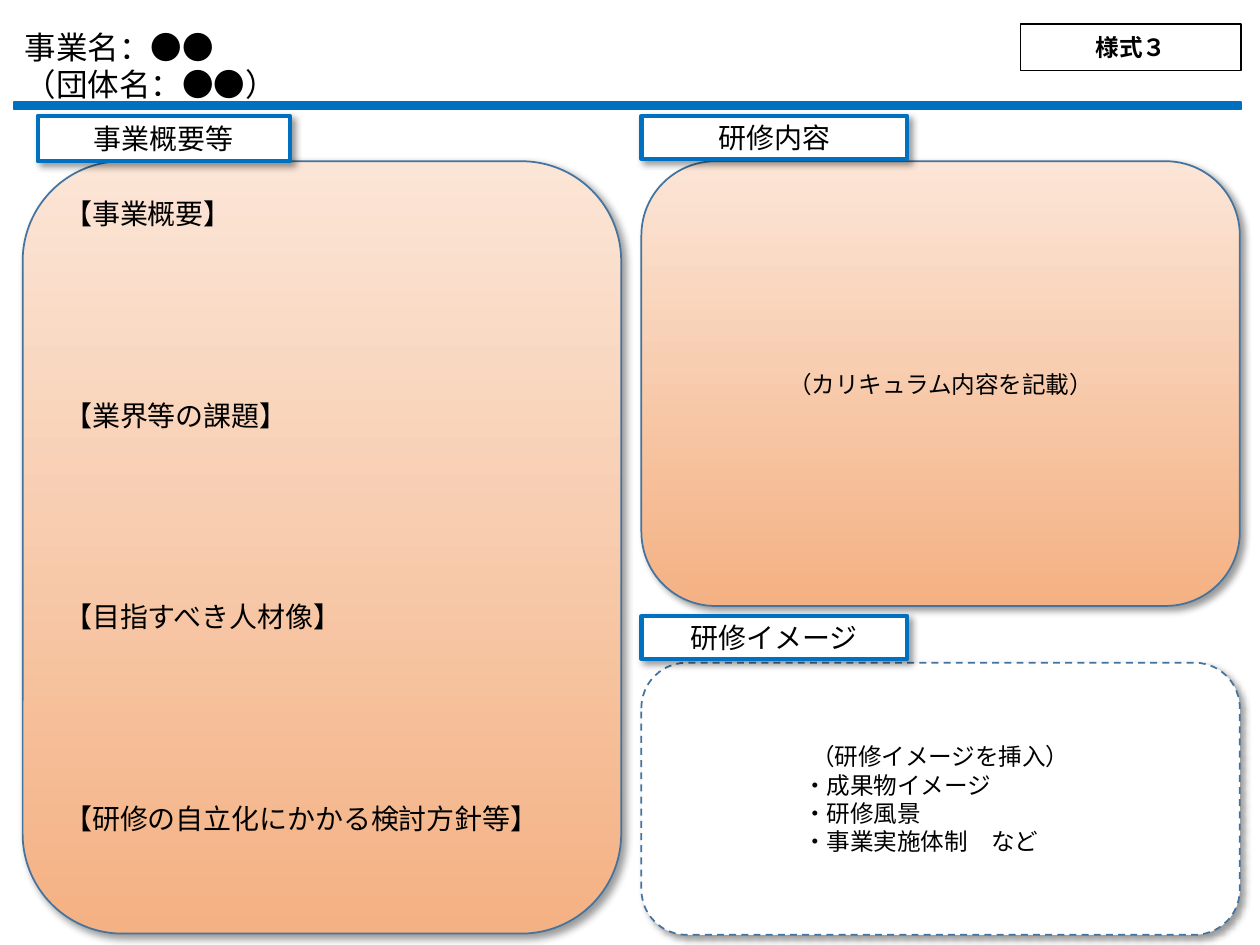
import pptx
import pptx.util
import pptx.dml.color
import pptx.enum.dml
import pptx.enum.shapes
import pptx.enum.text
import pptx.oxml
import pptx.oxml.ns
from pptx.util import Inches

FONT = "Noto Sans CJK JP"
COLORS = {
    "black": "000000",
    "white": "FFFFFF",
    "blue": "0070C0",
    "outline": "43739E",
    "peach": "FBE5D6",
    "orange": "F4B183",
}
LEFT, RIGHT, PANEL_WIDTH = 0.18, 5.09, 4.75

title = ["事業名：●●", "（団体名：●●）"]
form_number = "様式３"
overview = ["【事業概要】", "【業界等の課題】", "【目指すべき人材像】", "【研修の自立化にかかる検討方針等】"]
curriculum = ["（カリキュラム内容を記載）"]
image_prompt = "（研修イメージを挿入）"
image_examples = ["・成果物イメージ", "・研修風景", "・事業実施体制　など"]
headings = [
    ("研修内容", (RIGHT, 0.92, 2.11, 0.34)),
    ("事業概要等", (0.3, 0.92, 2, 0.36)),
    ("研修イメージ", (RIGHT, 4.89, 2.11, 0.34)),
]

ALIGN = pptx.enum.text.PP_ALIGN
ANCHOR = pptx.enum.text.MSO_ANCHOR
SHAPE = pptx.enum.shapes.MSO_SHAPE


def rgb(name):
    return pptx.dml.color.RGBColor.from_string(COLORS[name])


def write(frame, lines, size=16, align=ALIGN.CENTER, anchor=ANCHOR.MIDDLE,
          bold=False, gap=0, indent=0):
    frame.word_wrap = True
    frame.vertical_anchor = anchor
    for line in lines:
        started = bool(frame.text)
        paragraph = frame.add_paragraph() if started else frame.paragraphs[0]
        paragraph.alignment = align
        paragraph.line_spacing = pptx.util.Pt(size * 1.2)
        if started:
            paragraph.space_before = pptx.util.Pt(gap)
        if indent:
            paragraph._p.get_or_add_pPr().set("marL", str(Inches(indent)))
        run = paragraph.add_run()
        run.text = line
        run.font.name = FONT
        run.font.size = pptx.util.Pt(size)
        run.font.bold = bold
        run.font.color.rgb = rgb("black")
        east_asian = pptx.oxml.parse_xml(
            f'<a:ea {pptx.oxml.ns.nsdecls("a")} typeface="{FONT}"/>')
        run.font._element.find(pptx.oxml.ns.qn("a:latin")).addnext(east_asian)


def add_shadow(shape):
    shape._element.spPr.append(pptx.oxml.parse_xml(
        f'<a:effectLst {pptx.oxml.ns.nsdecls("a")}>'
        f'<a:outerShdw blurRad="{pptx.util.Pt(4)}" dist="{pptx.util.Pt(3)}" '
        'dir="2700000" algn="tl" rotWithShape="0">'
        f'<a:srgbClr val="{COLORS["black"]}"><a:alpha val="40000"/></a:srgbClr>'
        '</a:outerShdw></a:effectLst>'))


def add_box(slide, place, kind=SHAPE.RECTANGLE, fill="white", line="blue",
            weight=1, shadow=False):
    box = slide.shapes.add_shape(kind, *map(Inches, place))
    if isinstance(fill, tuple):
        box.fill.gradient()
        box.fill.gradient_angle = 270
        for position, (stop, color) in enumerate(zip(box.fill.gradient_stops, fill)):
            stop.position = position
            stop.color.rgb = rgb(color)
    else:
        box.fill.solid()
        box.fill.fore_color.rgb = rgb(fill)
    box.line.color.rgb = rgb(line)
    box.line.width = pptx.util.Pt(weight)
    if shadow:
        add_shadow(box)
    else:
        box.shadow.inherit = False
    return box


def add_panel(slide, left, top, height, fill=("peach", "orange")):
    return add_box(slide, (left, top, PANEL_WIDTH, height), SHAPE.ROUNDED_RECTANGLE,
                   fill=fill, line="outline", shadow=True)


def main():
    deck = pptx.Presentation()
    deck.slide_width, deck.slide_height = Inches(10), Inches(7.5)
    slide = deck.slides.add_slide(deck.slide_layouts[6])

    title_box = slide.shapes.add_textbox(*map(Inches, (0.1, 0.17, 7.9, 0.71)))
    write(title_box.text_frame, title, size=18, align=ALIGN.LEFT, anchor=ANCHOR.TOP)
    add_box(slide, (0.11, 0.81, 9.74, 0.06), fill="blue")

    overview_panel = add_panel(slide, LEFT, 1.28, 6.13)
    write(overview_panel.text_frame, overview, align=ALIGN.LEFT, anchor=ANCHOR.TOP, gap=96)

    curriculum_panel = add_panel(slide, RIGHT, 1.28, 3.53)
    write(curriculum_panel.text_frame, curriculum, size=13.5)

    image_panel = add_panel(slide, RIGHT, 5.26, 2.16, fill="white")
    image_panel.line.dash_style = pptx.enum.dml.MSO_LINE.DASH
    write(image_panel.text_frame, [image_prompt], size=13.5)
    write(image_panel.text_frame, image_examples, size=13.5, align=ALIGN.LEFT, indent=1.08)

    for heading, place in headings:
        heading_box = add_box(slide, place, weight=2.5, shadow=True)
        write(heading_box.text_frame, [heading])

    form_box = add_box(slide, (8.1, 0.19, 1.75, 0.37), line="black")
    write(form_box.text_frame, [form_number], size=13.5, bold=True)

    deck.save("out.pptx")


if __name__ == "__main__":
    main()
